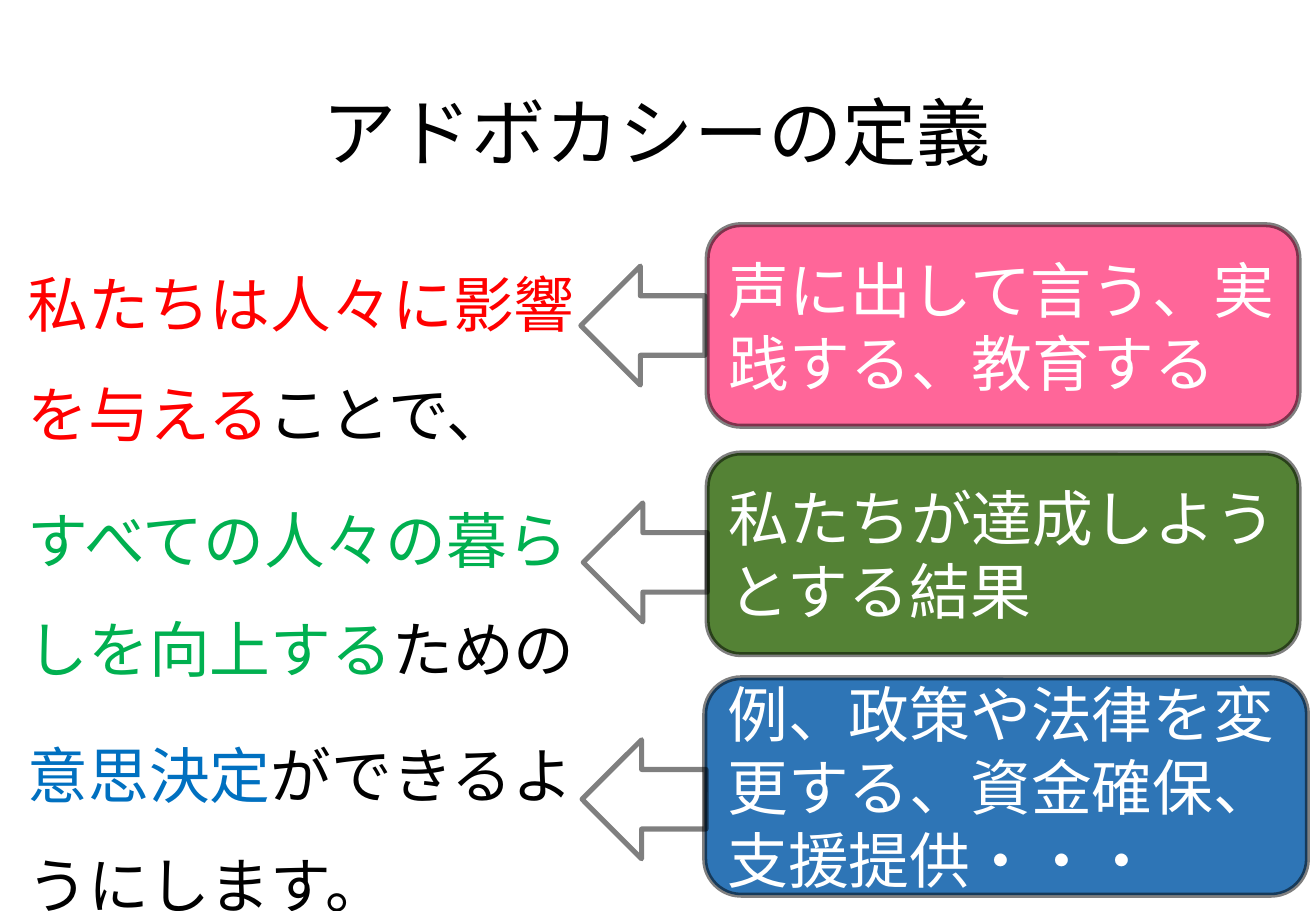
from lxml import etree
from pptx import Presentation
from pptx.dml.color import RGBColor
from pptx.enum.shapes import MSO_SHAPE as SHAPE
from pptx.enum.text import MSO_ANCHOR as ANCHOR, MSO_AUTO_SIZE as AUTO, PP_ALIGN as ALIGN
from pptx.oxml.ns import qn
from pptx.util import Inches, Pt

BLACK = RGBColor(0x00, 0x00, 0x00)
WHITE = RGBColor(0xFF, 0xFF, 0xFF)
RED = RGBColor(0xFF, 0x00, 0x00)
GREEN = RGBColor(0x00, 0xB0, 0x50)
BLUE = RGBColor(0x00, 0x70, 0xC0)
PINK_FILL = RGBColor(0xFF, 0x66, 0x99)
GREEN_FILL = RGBColor(0x54, 0x82, 0x35)
BLUE_FILL = RGBColor(0x2E, 0x75, 0xB6)


class Deck:
    """Holds the text style and the current slide."""

    font = "Calibri"
    title_size = Pt(44)
    text_size = Pt(36)

    def __init__(self, width, height):
        self.prs = Presentation()
        self.prs.slide_width = Inches(width)
        self.prs.slide_height = Inches(height)
        self.s = self.prs.slides.add_slide(self.prs.slide_layouts[5])

    def style(self, p, size, color=None):
        p.font.name = self.font
        p.font.size = size
        if color is not None:
            p.font.color.rgb = color

    def title(self, text, x, y, w, h):
        sp = self.s.shapes.title
        sp.left, sp.top, sp.width, sp.height = map(Inches, (x, y, w, h))
        tf = sp.text_frame
        tf.text = text
        tf.vertical_anchor = ANCHOR.MIDDLE
        p = tf.paragraphs[0]
        p.alignment = ALIGN.CENTER
        p.line_spacing = 0.9
        self.style(p, self.title_size, BLACK)

    def body(self, paragraphs, x, y, w, h):
        tf = self.s.shapes.add_textbox(*map(Inches, (x, y, w, h))).text_frame
        tf.word_wrap = True
        tf.auto_size = AUTO.NONE
        for i, runs in enumerate(paragraphs):
            p = tf.add_paragraph() if i else tf.paragraphs[0]
            p.line_spacing = 1.5
            p.space_before = Pt(10 if i else 0)
            self.style(p, self.text_size)
            for text, color in runs:
                r = p.add_run()
                r.text = text
                r.font.color.rgb = color

    def outlined(self, kind, x, y, w, h):
        """Adds a shape with a half-transparent black outline."""
        sp = self.s.shapes.add_shape(kind, *map(Inches, (x, y, w, h)))
        sp.shadow.inherit = False
        sp.line.width = Pt(3)
        sp.line.color.rgb = BLACK
        color = sp.line._ln.find(".//" + qn("a:srgbClr"))
        etree.SubElement(color, qn("a:alpha")).set("val", "50000")
        return sp

    def card(self, text, fill, x, y, w, h):
        sp = self.outlined(SHAPE.ROUNDED_RECTANGLE, x, y, w, h)
        sp.fill.solid()
        sp.fill.fore_color.rgb = fill
        tf = sp.text_frame
        tf.word_wrap = True
        tf.vertical_anchor = ANCHOR.MIDDLE
        p = tf.paragraphs[0]
        p.text = text
        p.alignment = ALIGN.LEFT
        self.style(p, self.text_size, WHITE)

    def arrow(self, x, y, w, h):
        self.outlined(SHAPE.LEFT_ARROW, x, y, w, h).fill.background()


def main():
    deck = Deck(10.83, 7.5)
    deck.title("アドボカシーの定義", 0.74, 0.4, 9.34, 1.45)

    # Definition, with its key phrases in colour
    deck.body([
        [("私たちは人々に影響を与える", RED), ("ことで、", BLACK)],
        [("すべての人々の暮らしを向上する", GREEN), ("ための", BLACK)],
        [("意思決定", BLUE), ("ができるようにします。", BLACK)],
    ], 0.13, 1.85, 4.86, 4.76)

    # Explanation cards
    cards = [
        ("声に出して言う、実践する、教育する", PINK_FILL, 5.82, 1.85, 4.87, 1.66),
        ("私たちが達成しようとする結果", GREEN_FILL, 5.82, 3.73, 4.87, 1.66),
        ("例、政策や法律を変更する、資金確保、支援提供・・・", BLUE_FILL, 5.8, 5.58, 4.96, 1.79),
    ]
    for card in cards:
        deck.card(*card)

    # Arrows from the cards to the phrases, evenly spaced
    for i, x in enumerate((4.78, 4.8, 4.79)):
        deck.arrow(x, 2.19 + 1.95 * i, 1.02, 0.98)

    deck.prs.save("out.pptx")


if __name__ == "__main__":
    main()
